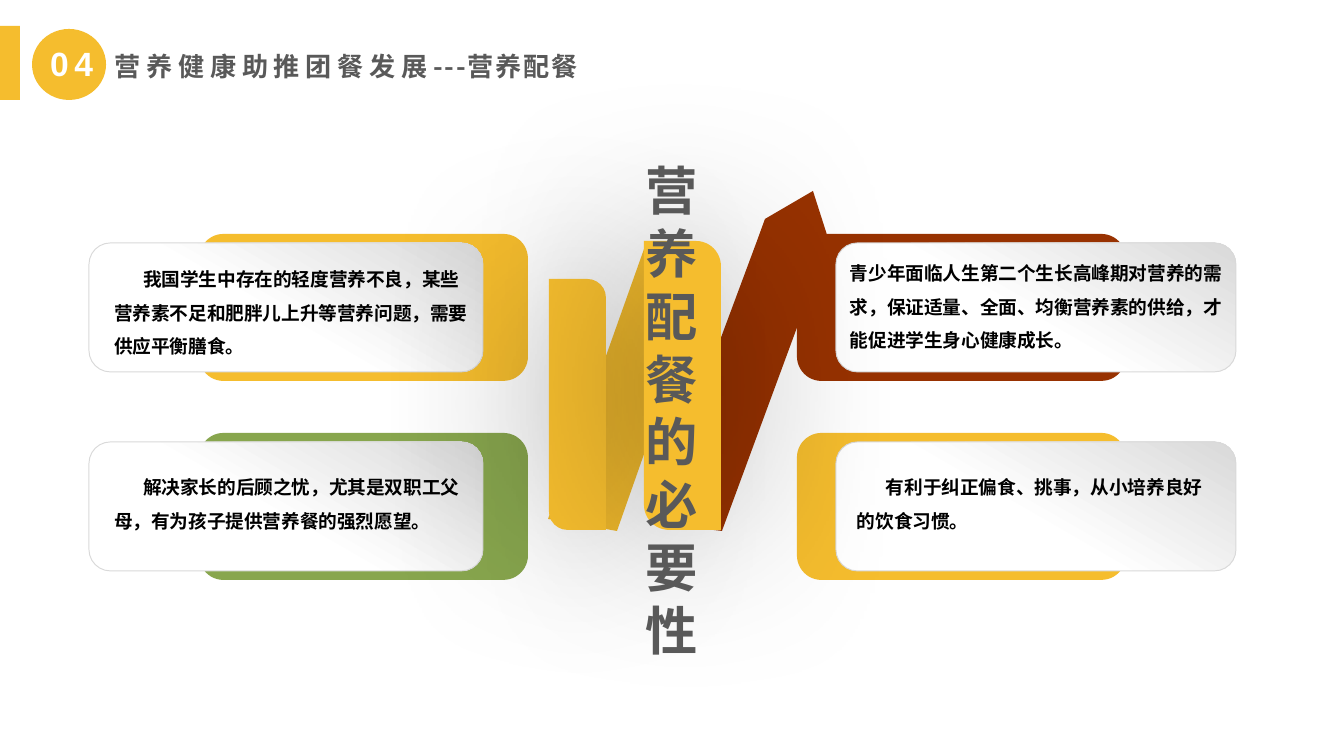
from pptx import Presentation
from pptx import util as u
from pptx.dml.color import RGBColor
from pptx.enum import shapes, text
from pptx.oxml import parse_xml
from pptx.oxml.ns import nsdecls, qn

SCALE = 914400 / 134.4  # EMU per px
YELLOW, RED, GREEN = "F5BD2E", "983201", "88A64E"
GREY, WHITE, SILVER, BLACK = "595959", "FFFFFF", "D9D9D9", "000000"
LATIN, SANS, SANS_JP = "Arial", "Noto Sans CJK SC", "Noto Sans CJK JP"
KIND = shapes.MSO_SHAPE


def px(value):
    return u.Emu(round(value * SCALE))


def color(hex_string):
    return RGBColor.from_string(hex_string)


class Deck:
    def __init__(self, width, height):
        self.presentation = Presentation()
        self.presentation.slide_width = px(width)
        self.presentation.slide_height = px(height)
        self.slide = None

    def add_slide(self):
        self.slide = self.presentation.slides.add_slide(self.presentation.slide_layouts[5])

    def style_font(self, font, size, hex_string, name, spacing=0):
        font.size, font.bold, font.name = u.Pt(size), True, name
        font.color.rgb = color(hex_string)
        east_asian = SANS if name == LATIN else name
        font._element.append(parse_xml(f'<a:ea {nsdecls("a")} typeface="{east_asian}"/>'))
        if spacing:
            font._element.set("spc", str(spacing * 100))

    def paint(self, shape, fill):
        shape.shadow.inherit = False
        shape.fill.solid()
        shape.fill.fore_color.rgb = color(fill)
        shape.line.fill.background()
        return shape

    def box(self, kind, left, top, width, height, fill):
        shape = self.slide.shapes.add_shape(kind, px(left), px(top), px(width), px(height))
        return self.paint(shape, fill)

    def card(self, left, top, width, height):
        shape = self.box(KIND.ROUNDED_RECTANGLE, left, top, width, height, WHITE)
        shape.fill.gradient()
        shape.fill.gradient_angle = 60
        for stop, position, shade in zip(shape.fill.gradient_stops, (0.45, 1), (WHITE, SILVER)):
            stop.position = position
            stop.color.rgb = color(shade)
        shape.line.color.rgb = color(SILVER)
        shape.line.width = u.Pt(0.5)

    def ribbon(self, points, fill):
        builder = self.slide.shapes.build_freeform(*points[0], scale=SCALE)
        builder.add_line_segments(points[1:], close=True)
        self.paint(builder.convert_to_shape(), fill)

    def column(self, left, top, width, height):
        shape = self.box(KIND.ROUND_2_DIAG_RECTANGLE, left, top, width, height, YELLOW)
        shape.adjustments[0], shape.adjustments[1] = 0.326, 0
        properties = shape._element.spPr
        properties.find(qn("a:xfrm")).set("flipH", "1")
        properties.find(qn("a:effectLst")).append(parse_xml(
            f'<a:outerShdw {nsdecls("a")} blurRad="{u.Pt(100)}" algn="ctr" rotWithShape="0">'
            '<a:srgbClr val="000000"><a:alpha val="40000"/></a:srgbClr></a:outerShdw>'))

    def text_box(self, left, top, width, height, words, size, hex_string, name,
                 align=text.PP_ALIGN.LEFT, line_spacing=1, indent=0, spacing=0, inset=13):
        shape = self.slide.shapes.add_textbox(px(left), px(top), px(width), px(height))
        frame = shape.text_frame
        frame.word_wrap = True
        frame.margin_left = frame.margin_right = px(inset)
        paragraph = frame.paragraphs[0]
        paragraph.alignment, paragraph.line_spacing = align, line_spacing
        if indent:
            paragraph._p.get_or_add_pPr().set("indent", str(px(indent)))
        run = paragraph.add_run()
        run.text = words
        # Letter spacing belongs to the run
        font = run.font if spacing else paragraph.font
        self.style_font(font, size, hex_string, name, spacing)
        return shape

    def title(self, left, top, width, height, runs):
        shape = self.slide.shapes.title
        shape.left, shape.top, shape.width, shape.height = map(px, (left, top, width, height))
        frame = shape.text_frame
        frame.word_wrap = False
        frame.auto_size = text.MSO_AUTO_SIZE.NONE
        frame.vertical_anchor = text.MSO_ANCHOR.TOP
        frame.margin_left = frame.margin_right = 0
        paragraph = frame.paragraphs[0]
        paragraph.alignment = text.PP_ALIGN.LEFT
        for words, name, spacing in runs:
            run = paragraph.add_run()
            run.text = words
            self.style_font(run.font, 14, GREY, name, spacing)


def main():
    deck = Deck(1344, 756)
    deck.add_slide()

    # Header
    deck.title(115, 44, 484, 60, [("营养健康助推团餐发展", LATIN, 3), ("---营养配餐", SANS, 1)])
    deck.box(KIND.OVAL, 32, 29, 74, 71, YELLOW)
    deck.box(KIND.RECTANGLE, -1, 26, 21, 74, YELLOW)
    number = deck.text_box(41, 36, 68, 50, "04", 18, WHITE, LATIN, spacing=3, inset=9)
    number.text_frame.word_wrap = False

    # Coloured plates behind the cards
    rows = (234, 433)
    for top, fills in zip(rows, ((YELLOW, RED), (GREEN, YELLOW))):
        for left, fill in zip((199, 797), fills):
            deck.box(KIND.ROUNDED_RECTANGLE, left, top, 329, 147, fill)

    # Cards: row, card left and width, text left, top and width, indent, words
    reasons = [
        (0, 89, 394, 101, 250, 382, 29,
         "我国学生中存在的轻度营养不良，某些营养素不足和肥胖儿上升等营养问题，需要供应平衡膳食。"),
        (1, 89, 394, 101, 458, 382, 29,
         "解决家长的后顾之忧，尤其是双职工父母，有为孩子提供营养餐的强烈愿望。"),
        (0, 836, 400, 837, 244, 409, 0,
         "青少年面临人生第二个生长高峰期对营养的需求，保证适量、全面、均衡营养素的供给，才能促进学生身心健康成长。"),
        (1, 836, 400, 844, 458, 383, 29,
         "有利于纠正偏食、挑事，从小培养良好的饮食习惯。"),
    ]
    for row, left, width, text_left, text_top, text_width, indent, words in reasons:
        deck.card(left, rows[row] + 9, width, 129)
        deck.text_box(text_left, text_top, text_width, 116, words, 10, BLACK, SANS,
                      line_spacing=1.5, indent=indent)

    # Folded ribbon in the middle
    deck.ribbon([(813, 191), (829, 241), (722, 531), (652, 523), (757, 241), (765, 219)], RED)
    deck.ribbon([(548, 519), (644, 249), (712, 261), (617, 531)], YELLOW)
    deck.column(549, 279, 57, 251)
    deck.column(644, 241, 77, 289)

    # Vertical caption
    deck.text_box(615, 152, 113, 520, "营养配餐的必要性", 28, GREY, SANS_JP,
                  align=text.PP_ALIGN.CENTER)

    deck.presentation.save("out.pptx")


if __name__ == "__main__":
    main()
